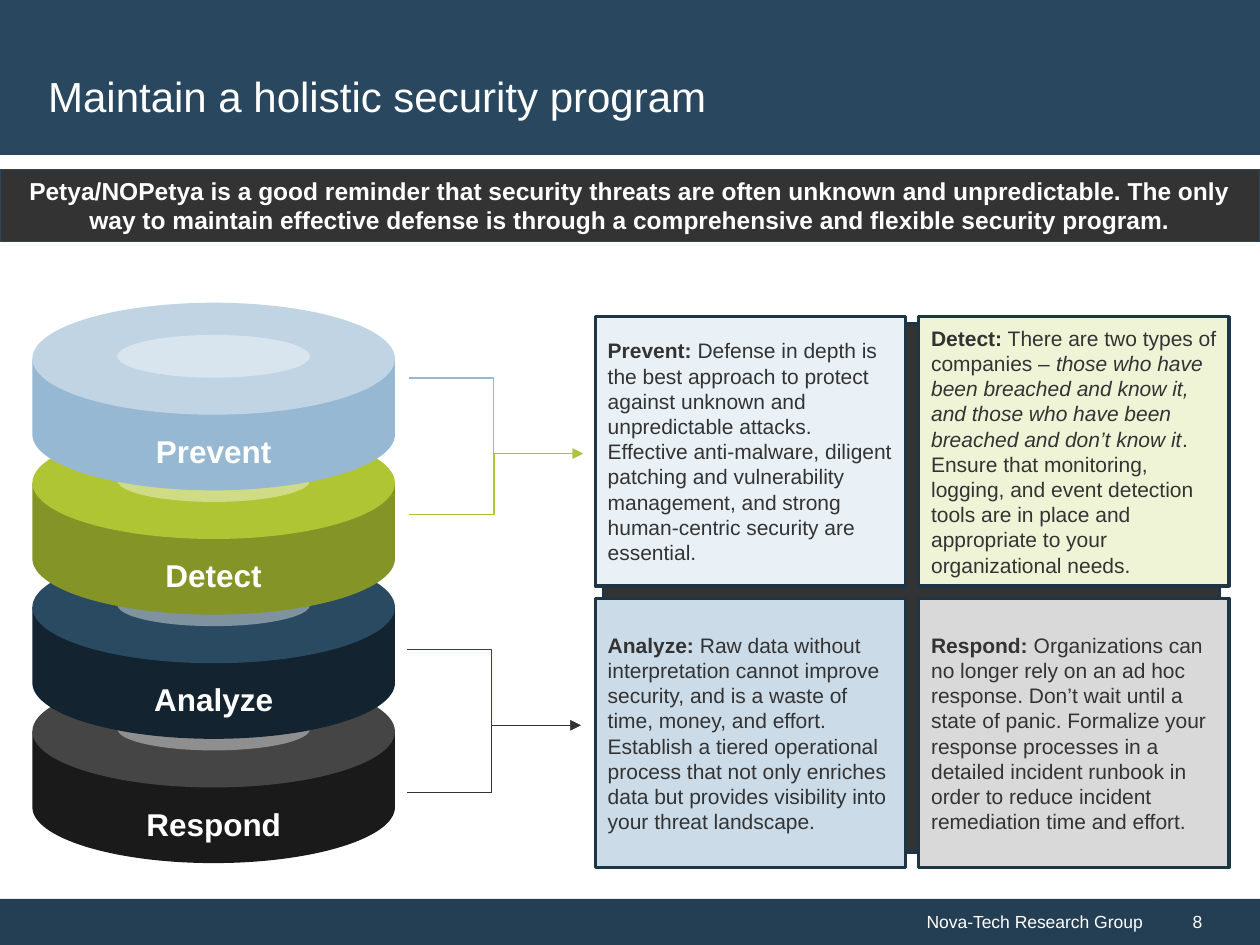
"""Build the holistic security program slide."""
from dataclasses import dataclass

from lxml import etree
from pptx import Presentation, util as u
from pptx.dml.color import RGBColor
from pptx.enum import shapes, text
from pptx.oxml.ns import qn

Pt = u.Pt


@dataclass(frozen=True)
class Theme:
    font: str = "Arial"
    white: str = "FFFFFF"
    dark: str = "333333"
    header: str = "29475F"
    footer: str = "243F54"
    border: str = "1E3546"
    title_size: int = 24
    label_size: int = 18
    banner_size: int = 14
    body_size: int = 12
    footer_size: int = 10


THEME = Theme()
TITLE = "Maintain a holistic security program"
BANNER = ("Petya/NOPetya is a good reminder that security threats are often unknown and "
          "unpredictable. The only way to maintain effective defense is through a "
          "comprehensive and flexible security program.")
FOOTER = [("Nova-Tech Research Group", 0, 660, 20.9, text.PP_ALIGN.RIGHT),
          ("8", 660, 60, 14.4, text.PP_ALIGN.LEFT)]

DISCS = [("Prevent", 81.4, "96B8D2", "C0D4E4"),
         ("Detect", 69.8, "849427", "B0C534"),
         ("Analyze", 83.5, "142330", "2A4A62"),
         ("Respond", 92.2, "1A1A1A", "454545")]

PANELS = [
    ("EAF1F6", [("Prevent:", "b"), (
        " Defense in depth is the best approach to protect against unknown and unpredictable "
        "attacks. Effective anti-malware, diligent patching and vulnerability management, and "
        "strong human-centric security are essential.", "")]),
    ("F0F4D6", [("Detect:", "b"), (" There are two types of companies – ", ""), (
        "those who have been breached and know it, and those who have been breached and "
        "don’t know it", "i"), (
        ". Ensure that monitoring, logging, and event detection tools are in place and "
        "appropriate to your organizational needs.", "")]),
    ("CBDBE8", [("Analyze:", "b"), (
        " Raw data without interpretation cannot improve security, and is a waste of time, "
        "money, and effort. Establish a tiered operational process that not only enriches data "
        "but provides visibility into your threat landscape.", "")]),
    ("D9D9D9", [("Respond:", "b"), (
        " Organizations can no longer rely on an ad hoc response. Don’t wait until a state of "
        "panic. Formalize your response processes in a detailed incident runbook in order to "
        "reduce incident remediation time and effort.", "")]),
]

ARROWS = [(232.7, 371.2, 414.5, "27465E", 48400), (232.7, 452.9, 414.5, THEME.dark, 48700),
          (234, 216, 259.2, "96B8D2", 48400), (234, 294.2, 259.2, "B0C534", 48700)]
ARROW_WIDTH = 99.2

DISC_LEFT, DISC_TOP, DISC_WIDTH, DISC_HEIGHT = 18.5, 173, 207.2, 64
DISC_PITCH, WALL, CURVE = 71, 43.2, 0.55
HOLE_WIDTH, HOLE_HEIGHT, HOLE_DROP = 110, 24.4, 18.4
LABEL_DROP, LABEL_HEIGHT = 70, 29
PANEL_LEFT, PANEL_TOP, PANEL_WIDTH, PANEL_HEIGHT = 340.2, 181, 177.4, 153.8
PANEL_STEP_X, PANEL_STEP_Y = 184.8, 161


def paint(shape, fill, line=None, weight=0.75, alpha=None):
    shape.shadow.inherit = False
    shape.fill.solid()
    shape.fill.fore_color.rgb = RGBColor.from_string(fill)
    if alpha:
        color = shape.fill._xPr.find(".//" + qn("a:srgbClr"))
        etree.SubElement(color, qn("a:alpha"), val=str(alpha * 1000))
    if line:
        shape.line.color.rgb = RGBColor.from_string(line)
        shape.line.width = Pt(weight)
    else:
        shape.line.fill.background()
    return shape


def add_block(parent, kind, place, fill, **style):
    return paint(parent.add_shape(kind, *map(Pt, place)), fill, **style)


def write(shape, spans, size, color=THEME.white, align=text.PP_ALIGN.LEFT,
          anchor=text.MSO_ANCHOR.MIDDLE, wrap=True):
    frame = shape.text_frame
    frame.word_wrap = wrap
    frame.vertical_anchor = anchor
    para = frame.paragraphs[0]
    para.alignment = align
    for words, style in spans:
        span = para.add_run()
        span.text = words
        span.font.name = THEME.font
        span.font.size = Pt(size)
        span.font.color.rgb = RGBColor.from_string(color)
        span.font.bold = "b" in style
        span.font.italic = "i" in style
    return para


def add_frame(page):
    rect = shapes.MSO_SHAPE.RECTANGLE
    for words, left, width, indent, align in FOOTER:
        box = add_block(page.shapes, rect, (left, 513.7, width, 26.3), THEME.footer)
        para = write(box, [(words, "")], THEME.footer_size, align=align)
        properties = para._p.get_or_add_pPr()
        properties.set("marL", str(Pt(indent)))
        properties.set("indent", "0")
    add_block(page.shapes, rect, (0, 0, 720, 88.6), THEME.header)
    title = page.shapes.add_textbox(*map(Pt, (20.4, 20.2, 679, 69)))
    write(title, [(TITLE, "")], THEME.title_size)


def add_banner(page):
    box = add_block(page.shapes, shapes.MSO_SHAPE.RECTANGLE, (0, 97, 720, 41.2),
                    THEME.dark, line=THEME.header)
    write(box, [(BANNER, "b")], THEME.banner_size, align=text.PP_ALIGN.CENTER,
          anchor=text.MSO_ANCHOR.TOP)


def add_wall(group, center, middle, color):
    radius, depth = DISC_WIDTH / 2, DISC_HEIGHT / 2
    edge = middle + WALL
    quarter = [(radius, CURVE * depth), (CURVE * radius, depth), (0, depth)]
    mirrored = [(-CURVE * radius, depth), (-radius, CURVE * depth), (-radius, 0)]
    rim = [(center + x, edge + y) for x, y in quarter + mirrored]
    points = [(center + radius, middle), (center + radius, edge), *rim]
    outline = group.build_freeform(Pt(center - radius), Pt(middle))
    outline.add_line_segments([(Pt(x), Pt(y)) for x, y in points], close=True)
    wall = outline.convert_to_shape()
    corners = wall._element.findall(".//" + qn("a:lnTo"))
    for first in (2, 5):
        curve = etree.Element(qn("a:cubicBezTo"))
        corners[first].addprevious(curve)
        for corner in corners[first:first + 3]:
            curve.append(corner[0])
            corner.getparent().remove(corner)
    paint(wall, color)


def add_disc(group, top, label, label_width, side, face):
    oval = shapes.MSO_SHAPE.OVAL
    center = DISC_LEFT + DISC_WIDTH / 2
    add_wall(group, center, top + DISC_HEIGHT / 2, side)
    add_block(group, oval, (DISC_LEFT, top, DISC_WIDTH, DISC_HEIGHT), face)
    add_block(group, oval, (center - HOLE_WIDTH / 2, top + HOLE_DROP, HOLE_WIDTH, HOLE_HEIGHT),
              THEME.white, alpha=40)
    box = group.add_textbox(*map(Pt, (center - label_width / 2, top + LABEL_DROP,
                                      label_width, LABEL_HEIGHT)))
    write(box, [(label, "b")], THEME.label_size, align=text.PP_ALIGN.CENTER, wrap=False)


def add_panels(page):
    group = page.shapes.add_group_shape().shapes
    rect = shapes.MSO_SHAPE.RECTANGLE
    border = {"line": THEME.border, "weight": 2}
    add_block(group, rect, (345, 185, 352, 302), THEME.dark, **border)
    for index, (fill, spans) in enumerate(PANELS):
        row, column = divmod(index, 2)
        place = (PANEL_LEFT + column * PANEL_STEP_X, PANEL_TOP + row * PANEL_STEP_Y,
                 PANEL_WIDTH, PANEL_HEIGHT)
        write(add_block(group, rect, place, fill, **border), spans, THEME.body_size, THEME.dark)


def add_arrow(page, left, start, end, color, bend):
    arrow = page.shapes.add_connector(shapes.MSO_CONNECTOR.ELBOW, Pt(left), Pt(start),
                                      Pt(left + ARROW_WIDTH), Pt(end))
    arrow.line.color.rgb = RGBColor.from_string(color)
    arrow.line.width = Pt(0.75)
    properties = arrow._element.spPr
    etree.SubElement(properties.find(qn("a:ln")), qn("a:tailEnd"), type="triangle")
    etree.SubElement(properties, qn("a:effectLst"))
    guides = properties.find(".//" + qn("a:avLst"))
    etree.SubElement(guides, qn("a:gd"), name="adj1", fmla=f"val {bend}")


def main():
    deck = Presentation()
    deck.slide_width, deck.slide_height = Pt(720), Pt(540)
    page = deck.slides.add_slide(deck.slide_layouts[6])
    add_frame(page)
    stack = page.shapes.add_group_shape().shapes
    for index, disc in reversed(list(enumerate(DISCS))):
        add_disc(stack, DISC_TOP + index * DISC_PITCH, *disc)
    add_banner(page)
    add_panels(page)
    for arrow in ARROWS:
        add_arrow(page, *arrow)
    deck.save("out.pptx")


if __name__ == "__main__":
    main()
